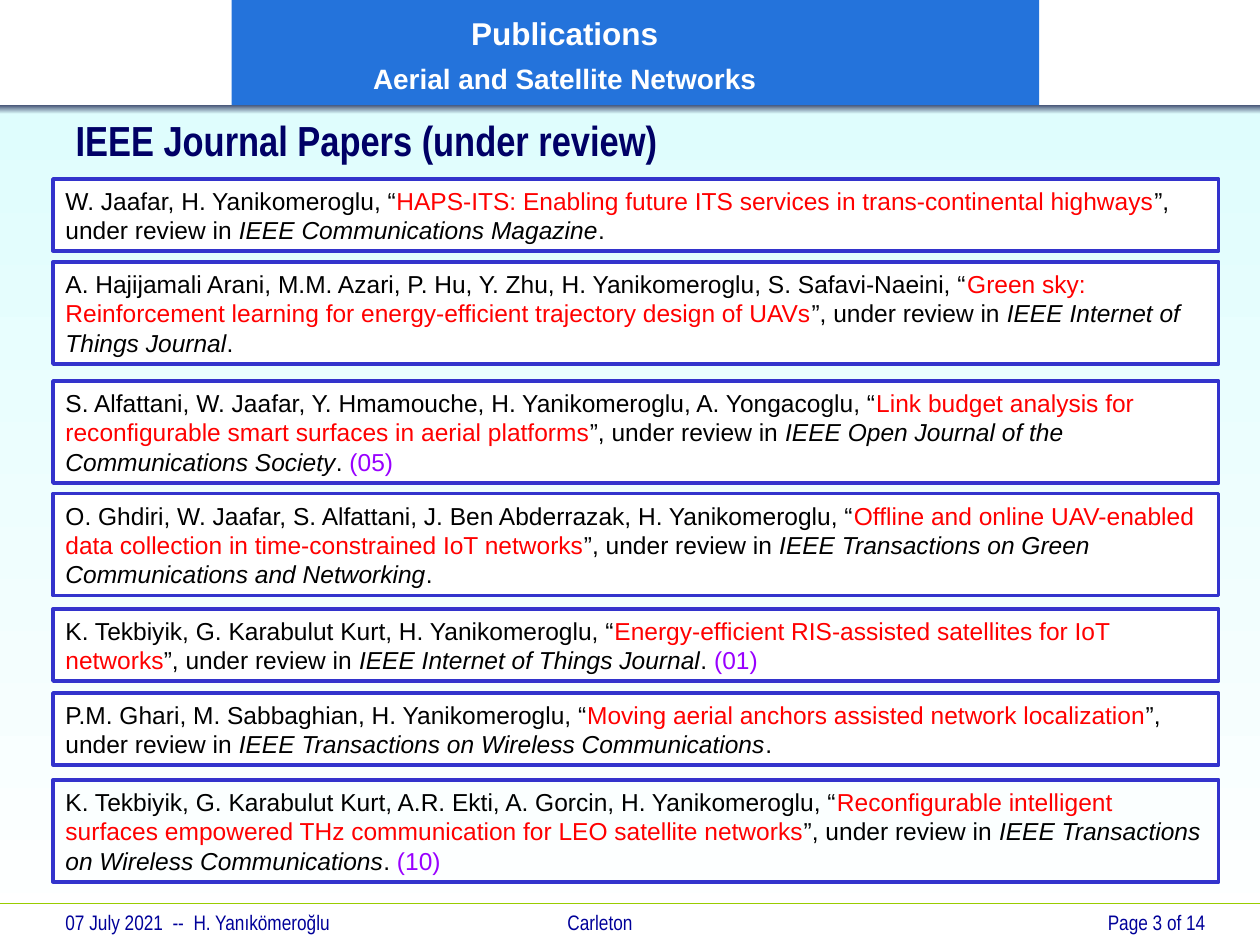
from dataclasses import dataclass
from typing import Optional

from lxml.etree import SubElement
from pptx import Presentation
from pptx.dml.color import RGBColor as Rgb
from pptx.enum.shapes import MSO_CONNECTOR as Connector, MSO_SHAPE as Preset
from pptx.enum.text import MSO_ANCHOR as Anchor, PP_ALIGN as Align
from pptx.oxml.ns import qn
from pptx.util import Cm, Pt

COLORS = {
    "sky": "DFFDFD",
    "white": "FFFFFF",
    "slate": "475577",
    "banner": "2473DB",
    "rule": "99CC00",
    "footer": "000099",
    "heading": "000066",
    "border": "3333CC",
    "text": "000000",
    "paper": "FF0000",
    "count": "9900FF",
}
SLIDE_WIDTH, SLIDE_HEIGHT = 25.4, 19.05
FOOTER_TOP = 18.21
BOX_LEFT, BOX_WIDTH = 1.07, 23.5
BOX_HEIGHTS = {2: 1.45, 3: 2.06}


@dataclass
class Publication:
    top: float
    lines: int
    authors: str
    paper: str
    journal: str
    count: str = ""
    fill: Optional[str] = "white"


PUBLICATIONS = [
    Publication(3.61, 2, "W. Jaafar, H. Yanikomeroglu",
                "HAPS-ITS: Enabling future ITS services in trans-continental highways",
                "IEEE Communications Magazine"),
    Publication(5.28, 3, "A. Hajijamali Arani, M.M. Azari, P. Hu, Y. Zhu, H. Yanikomeroglu, S. Safavi-Naeini",
                "Green sky: Reinforcement learning for energy-efficient trajectory design of UAVs",
                "IEEE Internet of Things Journal"),
    Publication(7.68, 3, "S. Alfattani, W. Jaafar, Y. Hmamouche, H. Yanikomeroglu, A. Yongacoglu",
                "Link budget analysis for reconfigurable smart surfaces in aerial platforms",
                "IEEE Open Journal of the Communications Society", "(05)"),
    Publication(9.95, 3, "O. Ghdiri, W. Jaafar, S. Alfattani, J. Ben Abderrazak, H. Yanikomeroglu",
                "Offline and online UAV-enabled data collection in time-constrained IoT networks",
                "IEEE Transactions on Green Communications and Networking"),
    Publication(12.28, 2, "K. Tekbiyik, G. Karabulut Kurt, H. Yanikomeroglu",
                "Energy-efficient RIS-assisted satellites for IoT networks",
                "IEEE Internet of Things Journal", "(01)"),
    Publication(13.97, 2, "P.M. Ghari, M. Sabbaghian, H. Yanikomeroglu",
                "Moving aerial anchors assisted network localization",
                "IEEE Transactions on Wireless Communications"),
    Publication(15.72, 3, "K. Tekbiyik, G. Karabulut Kurt, A.R. Ekti, A. Gorcin, H. Yanikomeroglu",
                "Reconfigurable intelligent surfaces empowered THz communication for LEO satellite networks",
                "IEEE Transactions on Wireless Communications", "(10)", fill=None),
]


def color(name: str) -> Rgb:
    return Rgb.from_string(COLORS[name])


def set_font(font, name: str, size: float, color_name: str, bold: bool = False) -> None:
    font.name = name
    font.size = Pt(size)
    font.bold = bold
    font.color.rgb = color(color_name)


def add_rectangle(slide, left: float, top: float, width: float, height: float, fill: Optional[str] = None):
    shape = slide.shapes.add_shape(Preset.RECTANGLE, Cm(left), Cm(top), Cm(width), Cm(height))
    shape.shadow.inherit = False
    shape.line.fill.background()
    if fill:
        shape.fill.solid()
        shape.fill.fore_color.rgb = color(fill)
    else:
        shape.fill.background()
    return shape


def add_gradient(slide, top: float, height: float, start: str, end: str) -> None:
    shape = add_rectangle(slide, 0, top, SLIDE_WIDTH, height)
    shape.fill.gradient()
    shape.fill.gradient_angle = 270
    for stop, name in zip(shape.fill.gradient_stops, (start, end)):
        stop.color.rgb = color(name)


def add_footer_text(slide, left: float, width: float, text: str, align, tab: Optional[float] = None) -> None:
    frame = slide.shapes.add_textbox(Cm(left), Cm(FOOTER_TOP), Cm(width), Cm(0.8)).text_frame
    frame.word_wrap = True
    paragraph = frame.paragraphs[0]
    paragraph.text = text
    paragraph.alignment = align
    if tab:
        tabs = SubElement(paragraph._p.get_or_add_pPr(), qn("a:tabLst"))
        SubElement(tabs, qn("a:tab"), pos=str(Cm(tab)), algn="l")
    set_font(paragraph.font, "Arial Narrow", 12, "footer")


def add_footer(slide) -> None:
    line = slide.shapes.add_connector(Connector.STRAIGHT, 0, Cm(FOOTER_TOP), Cm(SLIDE_WIDTH), Cm(FOOTER_TOP))
    line.line.color.rgb = color("rule")
    line.line.width = Pt(0.75)
    SubElement(line._element.spPr, qn("a:effectLst"))
    add_footer_text(slide, 1.07, 15.88, "07 July 2021  --  H. Yanıkömeroğlu\tCarleton", Align.LEFT, 10.12)
    add_footer_text(slide, 19.05, 5.5, "Page 3 of 14", Align.RIGHT)


def add_banner(slide) -> None:
    frame = add_rectangle(slide, 4.67, 0, 16.28, 2.12, "banner").text_frame
    frame.word_wrap = True
    frame.vertical_anchor = Anchor.MIDDLE
    frame.margin_right = Cm(3.1)
    headings = [("Publications", 18, 0), ("Aerial and Satellite Networks", 16, 4)]
    for index, (text, size, space) in enumerate(headings):
        paragraph = frame.add_paragraph() if index else frame.paragraphs[0]
        paragraph.text = text
        paragraph.alignment = Align.CENTER
        paragraph.line_spacing = 1.1
        paragraph.space_before = Pt(space)
        set_font(paragraph.font, "Arial", size, "white", bold=True)


def format_title(title) -> None:
    title.element.getparent().append(title.element)
    title.left, title.top, title.width, title.height = Cm(1.27), Cm(2.29), Cm(21.6), Cm(1.07)
    frame = title.text_frame
    frame.text = "IEEE Journal Papers (under review)"
    frame.vertical_anchor = Anchor.MIDDLE
    paragraph = frame.paragraphs[0]
    paragraph.alignment = Align.LEFT
    set_font(paragraph.font, "Arial Narrow", 24, "heading", bold=True)


def add_publication(slide, publication: Publication) -> None:
    shape = add_rectangle(slide, BOX_LEFT, publication.top, BOX_WIDTH,
                          BOX_HEIGHTS[publication.lines], publication.fill)
    shape.line.color.rgb = color("border")
    shape.line.width = Pt(2)
    frame = shape.text_frame
    frame.word_wrap = True
    frame.vertical_anchor = Anchor.MIDDLE
    paragraph = frame.paragraphs[0]
    paragraph.alignment = Align.LEFT
    set_font(paragraph.font, "Arial", 14, "text")
    parts = [
        (f"{publication.authors}, “", "text", False),
        (publication.paper, "paper", False),
        ("”, under review in ", "text", False),
        (publication.journal, "text", True),
        (".", "text", False),
    ]
    if publication.count:
        parts.append((f" {publication.count}", "count", False))
    for text, color_name, italic in parts:
        run = paragraph.add_run()
        run.text = text
        run.font.color.rgb = color(color_name)
        if italic:
            run.font.italic = True


def main() -> None:
    presentation = Presentation()
    presentation.slide_width = Cm(SLIDE_WIDTH)
    presentation.slide_height = Cm(SLIDE_HEIGHT)
    slide = presentation.slides.add_slide(presentation.slide_layouts[5])
    add_gradient(slide, 2.18, 16.87, "sky", "white")
    add_footer(slide)
    add_gradient(slide, 2.12, 0.18, "slate", "sky")
    add_banner(slide)
    format_title(slide.shapes.title)
    for publication in PUBLICATIONS:
        add_publication(slide, publication)
    presentation.save("out.pptx")


if __name__ == "__main__":
    main()
